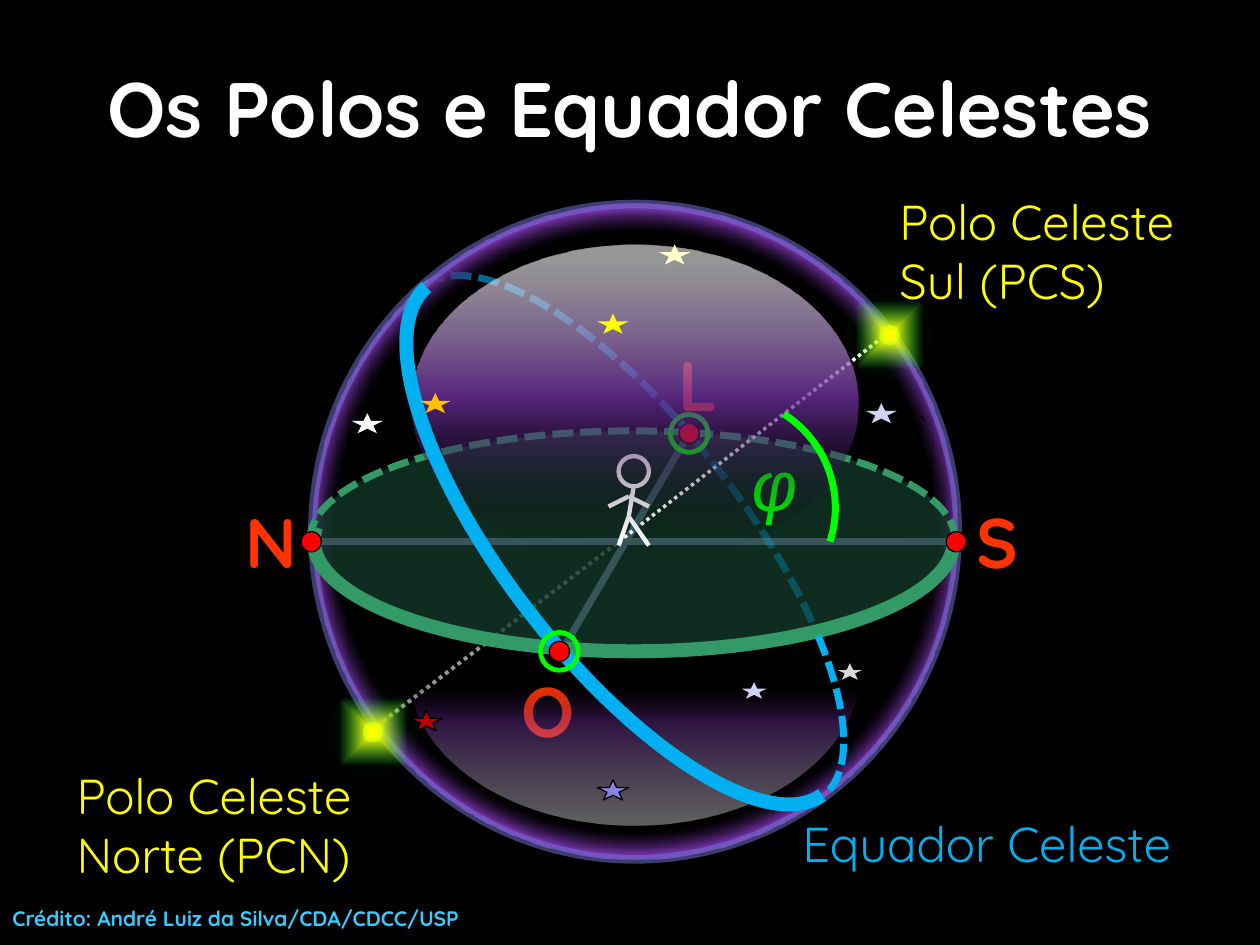
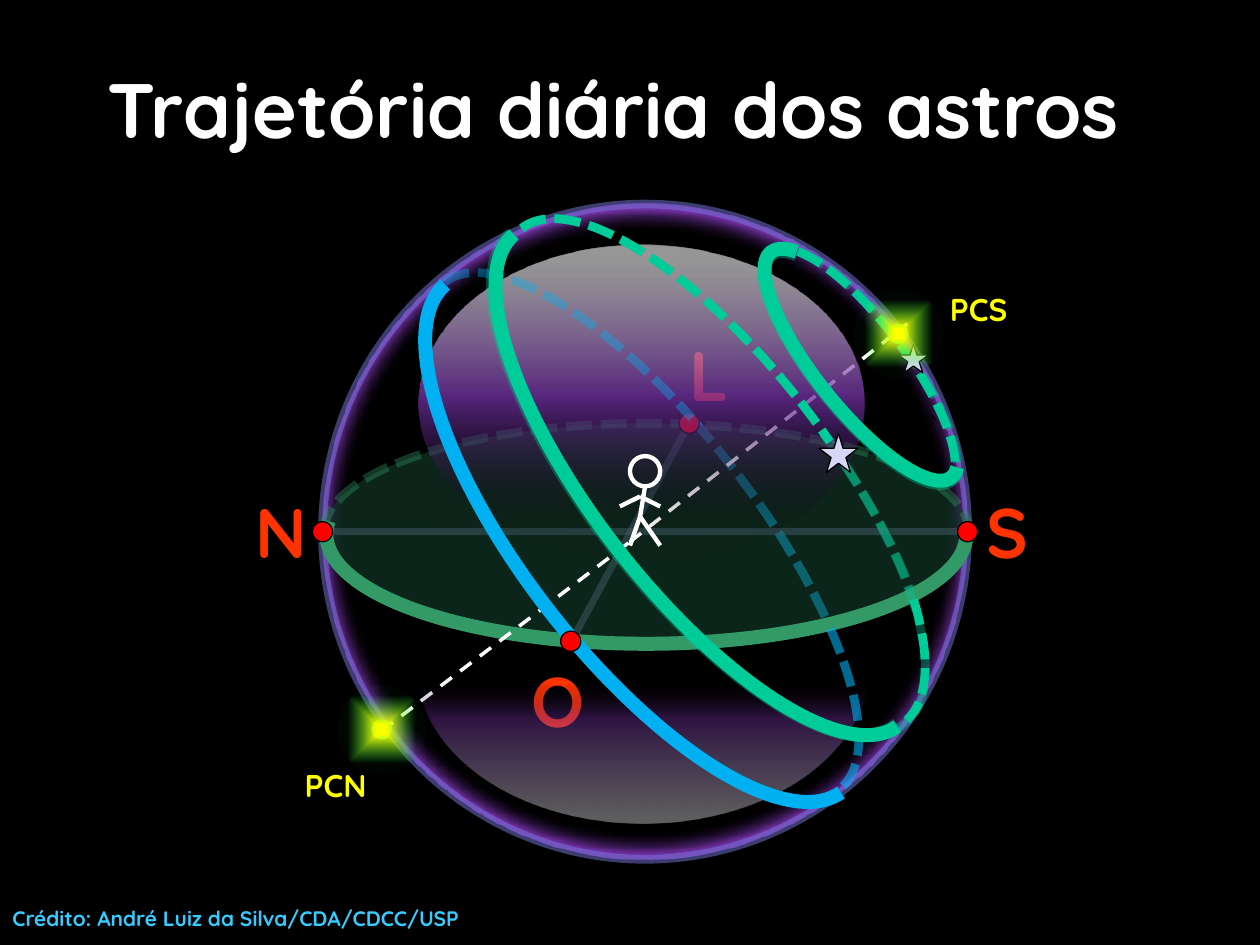
"""Build two slides on the celestial sphere: poles and equator, and daily star paths."""
from pptx import Presentation
from pptx.dml.color import RGBColor
from pptx.enum.dml import MSO_LINE as DASH
from pptx.enum.shapes import MSO_CONNECTOR, MSO_SHAPE as SHAPE
from pptx.enum.text import MSO_ANCHOR, PP_ALIGN as ALIGN
from pptx.oxml import parse_xml
from pptx.oxml.ns import nsdecls, qn
from pptx.util import Pt

PX = 9144
FONT = "Quicksand"
BLACK = RGBColor(0x00, 0x00, 0x00)
WHITE = RGBColor(0xFF, 0xFF, 0xFF)
YELLOW = RGBColor(0xFF, 0xFF, 0x00)
RED = RGBColor(0xFF, 0x00, 0x00)
ORANGE = RGBColor(0xFF, 0x33, 0x00)
PURPLE = RGBColor(0x70, 0x30, 0xA0)
RIM = RGBColor(0x78, 0x78, 0xDE)
DIAMETER = RGBColor(0xA5, 0xA5, 0xE9)
GROUND = RGBColor(0x14, 0x3C, 0x2B)
HORIZON = RGBColor(0x33, 0x99, 0x66)
EQUATOR = RGBColor(0x00, 0xB0, 0xF0)
PATH = RGBColor(0x00, 0xCC, 0x99)
LIME = RGBColor(0x00, 0xFF, 0x00)
GLOW = RGBColor(0x21, 0xFF, 0x46)
CREDIT = RGBColor(0x37, 0xCB, 0xFF)
LILAC = RGBColor(0xD2, 0xD2, 0xF4)
PALE_LILAC = RGBColor(0xD6, 0xD6, 0xF5)
CRIMSON = RGBColor(0xC0, 0x00, 0x00)
VIOLET = RGBColor(0x85, 0x85, 0xE0)
SILVER = RGBColor(0xD9, 0xD9, 0xD9)
AMBER = RGBColor(0xFF, 0xC0, 0x00)
CREAM = RGBColor(0xFF, 0xFF, 0xCC)

CENTRE = '<a:fillToRect l="50000" t="50000" r="50000" b="50000"/>'
ROUND = f'<a:path path="circle">{CENTRE}</a:path>'
SQUARE = f'<a:path path="shape">{CENTRE}</a:path>'
ACROSS = '<a:lin ang="0" scaled="0"/>'
DOWN = '<a:lin ang="5400000" scaled="0"/>'
OUTLINE = (BLACK, 0.75)
TILT = 142.1


def draw(shapes, kind, box, fill=None, line=None, turn=0, adjust=()):
    """Draw a preset shape in a box or, without a kind, a line between two points."""
    place = [value * PX for value in box]
    if kind is None:
        item = shapes.add_connector(MSO_CONNECTOR.STRAIGHT, *place)
    else:
        item = shapes.add_shape(kind, *place)
        item.rotation = turn
        for index, value in enumerate(adjust):
            item.adjustments[index] = value
        item.fill.background()
    props = item._element.spPr
    if fill and isinstance(fill[0], RGBColor):
        item.fill.solid()
        item.fill.fore_color.rgb = fill[0]
        alpha = parse_xml(f'<a:alpha {nsdecls("a")} val="{fill[1] * 1000}"/>')
        props.find(".//" + qn("a:srgbClr")).append(alpha)
    elif fill:
        stops, shade = fill
        item.fill.gradient()
        marks = "".join(
            f'<a:gs pos="{pos * 1000}"><a:srgbClr val="{color}">'
            f'<a:alpha val="{opacity * 1000}"/></a:srgbClr></a:gs>'
            for pos, color, opacity in stops)
        gradient = parse_xml(f'<a:gradFill {nsdecls("a")} rotWithShape="1">'
                             f'<a:gsLst>{marks}</a:gsLst>{shade}</a:gradFill>')
        props.replace(props.find(qn("a:gradFill")), gradient)
    if line:
        color, width, dash, opacity = (*line, None, None)[:4]
        item.line.color.rgb = color
        item.line.width = Pt(width)
        if dash:
            item.line.dash_style = dash
        if opacity:
            alpha = parse_xml(f'<a:alpha {nsdecls("a")} val="{opacity * 1000}"/>')
            props.find(qn("a:ln")).find(".//" + qn("a:srgbClr")).append(alpha)
    else:
        item.line.fill.background()
    props.append(parse_xml(f'<a:effectLst {nsdecls("a")}/>'))
    return item


def write(item, text, size, color, bold=False, align=ALIGN.LEFT, font=FONT):
    """Write one formatted run into a placeholder or text box."""
    item.text_frame.word_wrap = True
    paragraph = item.text_frame.paragraphs[0]
    paragraph.alignment = align
    run = paragraph.add_run()
    run.text = text
    run.font.size = Pt(size)
    run.font.name = font
    run.font.bold = bold
    run.font.color.rgb = color
    return run


dashed_path = (PATH, 5, DASH.SQUARE_DOT)
faint_path = (PATH, 5, DASH.SQUARE_DOT, 35)
dashed_equator = (EQUATOR, 4, DASH.SQUARE_DOT)
dotted_axis = (WHITE, 2, DASH.ROUND_DOT)
dashed_axis = (WHITE, 2, DASH.DASH)

poles = dict(
    title="Os Polos e Equador Celestes", title_box=(0, 22, 1000, 125),
    shift=(0, 0), core=40, diameter_alpha=100,
    ground=(246, 342, 512, 173), ground_alpha=73,
    ground_line=(HORIZON, 4, DASH.SQUARE_DOT),
    rim=(249, 341, 508, 176), dome_x=327, moon=(442, 415), figure_dx=0,
    dimmed=True, rings=True,
    dots=dict(L=(539, 336), N=(239, 422), S=(751, 422), O=(436, 509)),
    glows=[(671, 231), (261, 546)],
    axis_under=[((294, 580, 491, 430), (WHITE, 2.25, DASH.ROUND_DOT))],
    axis_over=[((491, 430, 704, 265), dotted_axis)],
    labels=[((704, 147, 268, 104), "Polo Celeste Sul (PCS)", 28, YELLOW),
            ((51, 603, 260, 104), "Polo Celeste Norte (PCN)", 28, YELLOW),
            ((594, 641, 378, 57), "Equador Celeste", 28, EQUATOR, False, ALIGN.CENTER)],
    arcs_behind=[((399, 173, 190, 511), 54, 94.77, dashed_equator, TILT)],
    arcs_under=[((402, 175, 188, 511), 97.33, 145.46,
                 (EQUATOR, 4, DASH.SQUARE_DOT, 30), TILT)],
    arcs_front=[((402, 175, 188, 511), 146.21, 161.54, dashed_equator, TILT),
                ((401, 173, 191, 511), 162.18, 53.8, (EQUATOR, 8), TILT),
                ((487, 315, 176, 176), 181.4, 10.7, (LIME, 4), 0)],
    stars=[((586, 540, 25, 16), LILAC, OUTLINE),
           ((326, 564, 25, 16), CRIMSON, OUTLINE),
           ((474, 619, 25, 16), VIOLET, OUTLINE),
           ((662, 525, 25, 16), SILVER, OUTLINE),
           ((687, 320, 25, 16), LILAC, None),
           ((333, 312, 25, 16), AMBER, None),
           ((279, 328, 25, 16), WHITE, None),
           ((474, 249, 25, 16), YELLOW, None),
           ((523, 194, 25, 16), CREAM, None)])

paths = dict(
    title="Trajetória diária dos astros", title_box=(62, 23, 850, 125),
    shift=(8, -8), core=3, diameter_alpha=43,
    ground=(257, 336, 512, 173), ground_alpha=60,
    ground_line=(HORIZON, 5, DASH.SQUARE_DOT, 36),
    rim=(259, 337, 508, 174), dome_x=332, moon=(449, 413), figure_dx=9,
    dimmed=False, rings=False,
    dots=dict(L=(539, 328), N=(248, 414), S=(760, 414), O=(445, 501)),
    glows=[(678, 230), (268, 544)],
    axis_under=[],
    axis_over=[((303, 580, 500, 430), dashed_axis), ((500, 430, 720, 257), dashed_axis)],
    labels=[((744, 225, 87, 40), "PCS", 18, YELLOW, True),
            ((232, 603, 87, 40), "PCN", 18, YELLOW, True)],
    arcs_behind=[((479, 134, 180, 495), 116.63, 148.66, dashed_path, TILT),
                 ((420, 169, 179, 511), 91.55, 145.85,
                  (EQUATOR, 5, DASH.SQUARE_DOT), TILT)],
    arcs_under=[],
    arcs_front=[((648, 175, 71, 229), 159.36, 59.38, (PATH, 8), 141.3),
                ((648, 177, 71, 229), 58.97, 159.35, dashed_path, 143),
                ((648, 177, 71, 229), 159.36, 59.38, (PATH, 7.75, None, 35), 141.3),
                ((650, 178, 71, 229), 58.97, 159.35, faint_path, 143),
                ((476, 129, 180, 495), 54, 121.36, dashed_path, TILT),
                ((471, 131, 188, 495), 149.53, 161.54, dashed_path, TILT),
                ((483, 152, 180, 472), 123.33, 163.53, faint_path, TILT),
                ((476, 129, 180, 495), 54, 121.36, faint_path, TILT),
                ((469, 133, 180, 495), 161.8, 53.8, (PATH, 8, None, 35), TILT),
                ((420, 169, 179, 511), 146.64, 161.54,
                 (EQUATOR, 5, DASH.SQUARE_DOT, 60), TILT),
                ((416, 171, 191, 511), 162.18, 53.8, (EQUATOR, 8), TILT),
                ((420, 170, 180, 511), 54, 90.3,
                 (EQUATOR, 5, DASH.SQUARE_DOT, 38), TILT),
                ((471, 133, 180, 495), 162.18, 53.8, (PATH, 8), TILT)],
    stars=[((650, 344, 31, 31), PALE_LILAC, OUTLINE),
           ((713, 273, 24, 23), PALE_LILAC, OUTLINE)])

cardinals = dict(O=(404, 525), N=(185, 391), L=(529, 266), S=(765, 391))
limbs = [(503, 386, 499, 410), (499, 410, 515, 433), (499, 410, 491, 433),
         (499, 394, 515, 402), (483, 402, 499, 394)]

prs = Presentation()
prs.slide_width, prs.slide_height = 1000 * PX, 750 * PX
backdrop = prs.slide_master.background.fill
backdrop.solid()
backdrop.fore_color.rgb = BLACK

for scene in (poles, paths):
    slide = prs.slides.add_slide(prs.slide_layouts[5])
    shapes = slide.shapes
    dx, dy = scene["shift"]
    heading = shapes.title
    heading.left, heading.top, heading.width, heading.height = (
        value * PX for value in scene["title_box"])
    heading.text_frame.vertical_anchor = MSO_ANCHOR.MIDDLE
    write(heading, scene["title"], 44, WHITE, True, ALIGN.CENTER)

    for box, start, end, line, turn in scene["arcs_behind"]:
        draw(shapes, SHAPE.ARC, box, None, line, turn, (start, end))
    for ends, line in scene["axis_under"]:
        draw(shapes, None, ends, line=line)
    for box, *wording in scene["labels"]:
        write(shapes.add_textbox(*(value * PX for value in box)), *wording)

    shell = [(65, BLACK, scene["core"]), (70, PURPLE, 100)]
    draw(shapes, SHAPE.OVAL, (248 + dx, 162, 512, 520), (shell, ROUND), (RIM, 5, None, 50))
    for ends in ((445 + dx, 518 + dy, 547, 344 + dy), (248 + dx, 430 + dy, 759 + dx, 430 + dy)):
        draw(shapes, None, ends, line=(DIAMETER, 4, None, scene["diameter_alpha"]))
    draw(shapes, SHAPE.OVAL, scene["ground"], (GROUND, scene["ground_alpha"]),
         scene["ground_line"])
    for letter, (x, y) in cardinals.items():
        spot = shapes.add_textbox((x + dx) * PX, (y + dy) * PX, 39 * PX, 77 * PX)
        write(spot, letter, 40, ORANGE, True)

    figure_dx = scene["figure_dx"]
    draw(shapes, None, (731 + figure_dx, 330, 734 + figure_dx, 334), line=OUTLINE)
    draw(shapes, SHAPE.ARC, scene["rim"], (GROUND, 7), (HORIZON, 8), 0, (215.6, 109.4))
    for ends, line in scene["axis_over"]:
        draw(shapes, None, ends, line=line)
    for box, start, end, line, turn in scene["arcs_under"]:
        draw(shapes, SHAPE.ARC, box, None, line, turn, (start, end))

    if scene is poles:
        latitude = shapes.add_textbox(564 * PX, 345 * PX, 102 * PX, 77 * PX)
        latitude.rotation = 358.6
        write(latitude, "φ", 40, LIME, False, ALIGN.CENTER, "Arial").font.italic = True

    for letters in ("L", "NSO"):
        for letter in letters:
            x, y = scene["dots"][letter]
            if scene["rings"] and letter in "LO":
                draw(shapes, SHAPE.OVAL, (x - 7, y - 7, 30, 30), None, (LIME, 2.75))
            draw(shapes, SHAPE.OVAL, (x, y, 16, 16), (RED, 100), OUTLINE)
        if letters != "L":
            continue
        sky = [(6, WHITE, 58), (48, PURPLE, 77), (91, BLACK, 2)]
        dome = draw(shapes, SHAPE.OVAL, (scene["dome_x"], 194, 354, 252), (sky, DOWN))
        observer = shapes.add_group_shape()
        draw(observer.shapes, SHAPE.OVAL, (491 + figure_dx, 362, 24, 24), None, (WHITE, 2.5))
        for x1, y1, x2, y2 in limbs:
            draw(observer.shapes, None, (x1 + figure_dx, y1, x2 + figure_dx, y2),
                 line=(WHITE, 2.5))
        if scene["dimmed"]:
            observer._element.addnext(dome._element)
        nadir = [(3, WHITE, 37), (68, PURPLE, 41), (94, BLACK, 0)]
        draw(shapes, SHAPE.MOON, (*scene["moon"], 123, 358), (nadir, ACROSS), None, 270, (0.875,))
        for box, start, end, line, turn in scene["arcs_front"]:
            draw(shapes, SHAPE.ARC, box, None, line, turn, (start, end))

    for box, color, line in scene["stars"]:
        draw(shapes, SHAPE.STAR_5_POINT, box, (color, 100), line)
    for x, y in scene["glows"]:
        draw(shapes, SHAPE.OVAL, (x + 27, y + 27, 16, 16), (GLOW, 100))
        halo = [(11, YELLOW, 100), (77, GLOW, 2)]
        draw(shapes, SHAPE.OVAL, (x, y, 70, 70), (halo, SQUARE))
    credit = shapes.add_textbox(0, 714 * PX, 1028 * PX, 30 * PX)
    write(credit, "Crédito: André Luiz da Silva/CDA/CDCC/USP", 12, CREDIT, True)

prs.save("out.pptx")
